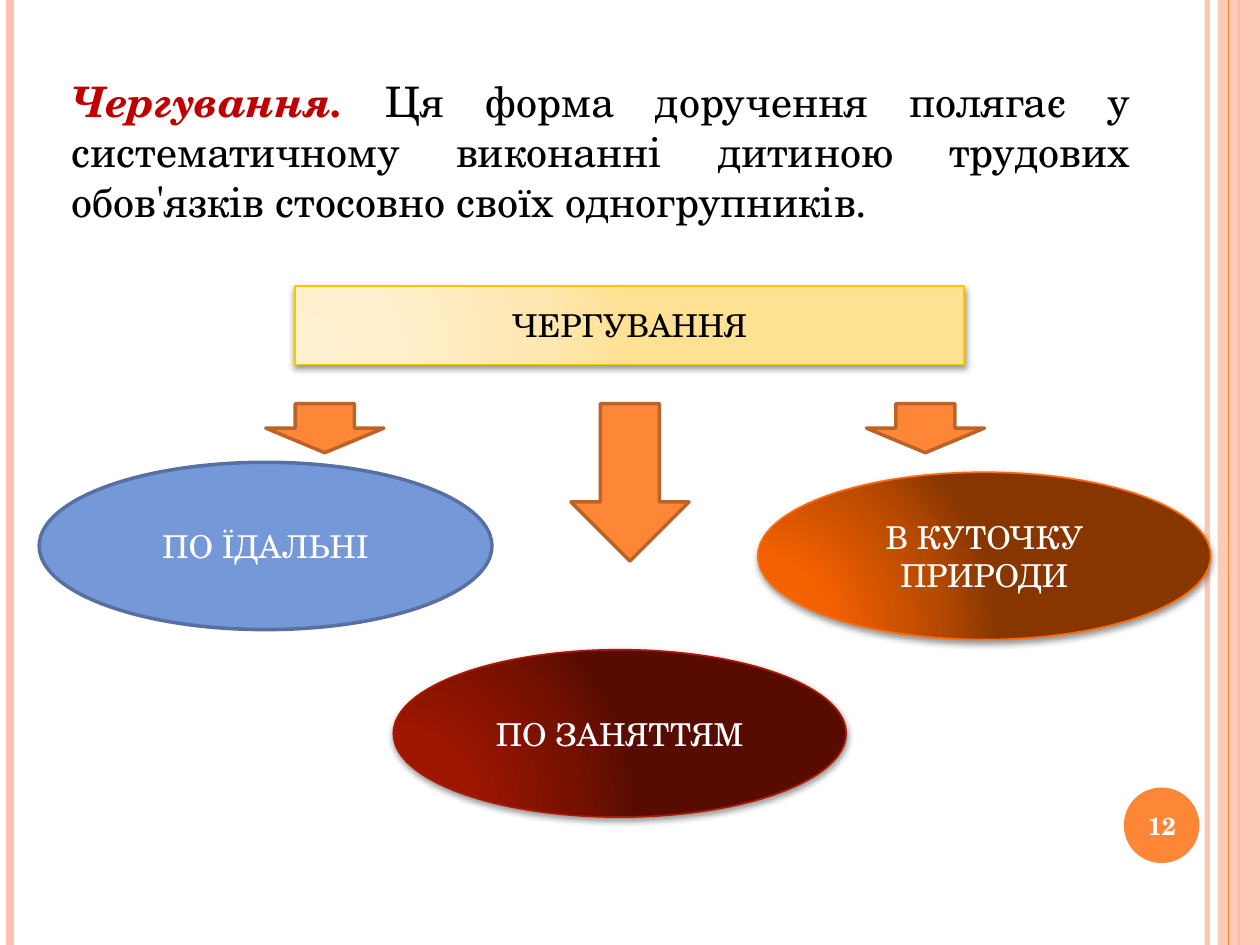
from dataclasses import dataclass

from lxml import etree
from pptx import Presentation
from pptx import util as u
from pptx.dml import color
from pptx.enum import shapes, text
from pptx.oxml import ns


@dataclass(frozen=True)
class Theme:
    font: str = "TeX Gyre Schola"
    body_size: float = 24
    label_size: float = 18
    number_size: float = 14
    dark: str = "000000"
    light: str = "FFFFFF"
    emphasis: str = "C00000"
    accent: str = "FE8637"
    accent_edge: str = "BC6329"
    stripe: str = "FEC3AE"
    blue: str = "7598D9"
    blue_edge: str = "5770A1"
    yellow: tuple = ("FFF0D1", "FFEFCC", "FFE7B1", "FFE193")
    yellow_edge: str = "F8C700"
    red: tuple = ("A41700", "9F1600", "771100", "580C00")
    red_edge: str = "AC1800"
    orange: tuple = ("FD6400", "F46100", "B74900", "873600")
    orange_edge: str = "FF6B0A"
    gradient_stops: tuple = (0, 30, 75, 100)


def add_xml(parent, tag, **attributes):
    values = {name: str(value) for name, value in attributes.items()}
    return etree.SubElement(parent, ns.qn(tag), values)


def set_opacity(element, percent):
    for color_element in element.iter(ns.qn("a:srgbClr")):
        add_xml(color_element, "a:alpha", val=percent * 1000)


class SlideBuilder:
    def __init__(self, slide, theme):
        self.slide = slide
        self.theme = theme

    def line(self, x, height, line_color, width, opacity=None):
        connector = self.slide.shapes.add_connector(
            shapes.MSO_CONNECTOR.STRAIGHT, u.Pt(x), 0, u.Pt(x), u.Pt(height))
        connector.line.color.rgb = color.RGBColor.from_string(line_color)
        connector.line.width = u.Pt(width)
        properties = connector._element.spPr
        if opacity:
            set_opacity(properties, opacity)
        add_xml(properties, "a:effectLst")

    def shape(self, kind, box, fill, edge=None, width=1, opacity=None):
        """Draw a preset shape; a tuple of colours as fill gives a gradient."""
        shape = self.slide.shapes.add_shape(kind, *map(u.Pt, box))
        shape.shadow.inherit = False
        if isinstance(fill, tuple):
            self.gradient(shape, fill)
        else:
            shape.fill.solid()
            shape.fill.fore_color.rgb = color.RGBColor.from_string(fill)
        if opacity:
            set_opacity(shape._element.spPr, opacity)
        if edge:
            shape.line.color.rgb = color.RGBColor.from_string(edge)
            shape.line.width = u.Pt(width)
        else:
            shape.line.fill.background()
        return shape

    def gradient(self, shape, colors):
        """Fill with a circular gradient that starts near the lower left."""
        shape.fill.gradient()
        gradient = shape._element.spPr.find(ns.qn("a:gradFill"))
        for child in list(gradient):
            gradient.remove(child)
        stops = add_xml(gradient, "a:gsLst")
        for position, value in zip(self.theme.gradient_stops, colors):
            stop = add_xml(stops, "a:gs", pos=position * 1000)
            add_xml(stop, "a:srgbClr", val=value)
        circle = add_xml(gradient, "a:path", path="circle")
        add_xml(circle, "a:fillToRect", l=5000, t=100000, r=120000, b=10000)

    def shadow(self, shape, opacity, distance):
        effects = shape._element.spPr.find(ns.qn("a:effectLst"))
        outer = add_xml(effects, "a:outerShdw", blurRad=u.Pt(4),
                        dist=u.Pt(distance), dir=90 * 60000, rotWithShape=0)
        add_xml(outer, "a:srgbClr", val=self.theme.dark)
        set_opacity(outer, opacity)

    def label(self, shape, runs, size, align=text.PP_ALIGN.CENTER,
              anchor=text.MSO_ANCHOR.MIDDLE):
        """Fill a shape with one paragraph of (text, colour, format) runs."""
        frame = shape.text_frame
        frame.word_wrap = True
        frame.vertical_anchor = anchor
        paragraph = frame.paragraphs[0]
        paragraph.alignment = align
        for content, font_color, extra in runs:
            run = paragraph.add_run()
            run.text = content
            run.font.color.rgb = color.RGBColor.from_string(font_color)
            values = {"name": self.theme.font, "size": u.Pt(size), **extra}
            for name, value in values.items():
                setattr(run.font, name, value)

    def text_box(self, box, runs, size, **layout):
        shape = self.slide.shapes.add_textbox(*map(u.Pt, box))
        self.label(shape, runs, size, **layout)


def draw_background(builder, theme, height):
    kinds = shapes.MSO_SHAPE
    builder.line(689.9, height, theme.stripe, 3, opacity=93)
    builder.line(5.9, height, theme.stripe, 4.5)
    builder.line(708, height, theme.accent, 1.5)
    builder.shape(kinds.RECTANGLE, (696, 0, 24, height), theme.stripe, opacity=87)
    builder.line(702, height, theme.accent, 0.75)
    builder.shape(kinds.OVAL, (642.2, 450, 43.2, 43.2), theme.accent)


def draw_duty_scheme(builder, theme):
    kinds = shapes.MSO_SHAPE
    heading = builder.shape(kinds.RECTANGLE, (168.5, 163.3, 382.5, 45),
                            theme.yellow, theme.yellow_edge)
    builder.shadow(heading, 40, 2)
    builder.label(heading, [("ЧЕРГУВАННЯ", theme.dark, {})], theme.label_size)

    duties = (
        ("ПО ЇДАЛЬНІ", 22.4, 264.2, theme.blue, theme.blue_edge, 2),
        ("ПО ЗАНЯТТЯМ", 224.8, 371.3, theme.red, theme.red_edge, 1),
        ("В КУТОЧКУ ПРИРОДИ", 433.1, 269.9, theme.orange, theme.orange_edge, 1),
    )
    for duty, left, top, fill, edge, width in duties:
        oval = builder.shape(kinds.OVAL, (left, top, 258.75, 95.6), fill, edge, width)
        if isinstance(fill, tuple):
            builder.shadow(oval, 42, 1.6)
        builder.label(oval, [(duty, theme.light, {})], theme.label_size)

    arrow_width = 67.5
    for center, height in ((185.6, 28.1), (528.8, 28.1), (360, 90)):
        box = (center - arrow_width / 2, 230.6, arrow_width, height)
        builder.shape(kinds.DOWN_ARROW, box, theme.accent, theme.accent_edge, 2)


def main():
    theme = Theme()
    presentation = Presentation()
    width, height = 720, 540
    presentation.slide_width, presentation.slide_height = u.Pt(width), u.Pt(height)
    blank_layout = presentation.slide_layouts[6]
    builder = SlideBuilder(presentation.slides.add_slide(blank_layout), theme)

    draw_background(builder, theme, height)
    definition = [
        ("Чергування. ", theme.emphasis, {"bold": True, "italic": True}),
        ("Ця форма доручення полягає у систематичному виконанні дитиною "
         "трудових обов'язків стосовно своїх одногрупників.", theme.dark, {}),
    ]
    builder.text_box((33.8, 39.4, 618.8, 94.5), definition, theme.body_size,
                     align=text.PP_ALIGN.JUSTIFY, anchor=text.MSO_ANCHOR.TOP)
    draw_duty_scheme(builder, theme)
    builder.text_box((640, 451.4, 48, 41), [("12", theme.light, {"bold": True})],
                     theme.number_size)

    presentation.save("out.pptx")


if __name__ == "__main__":
    main()
